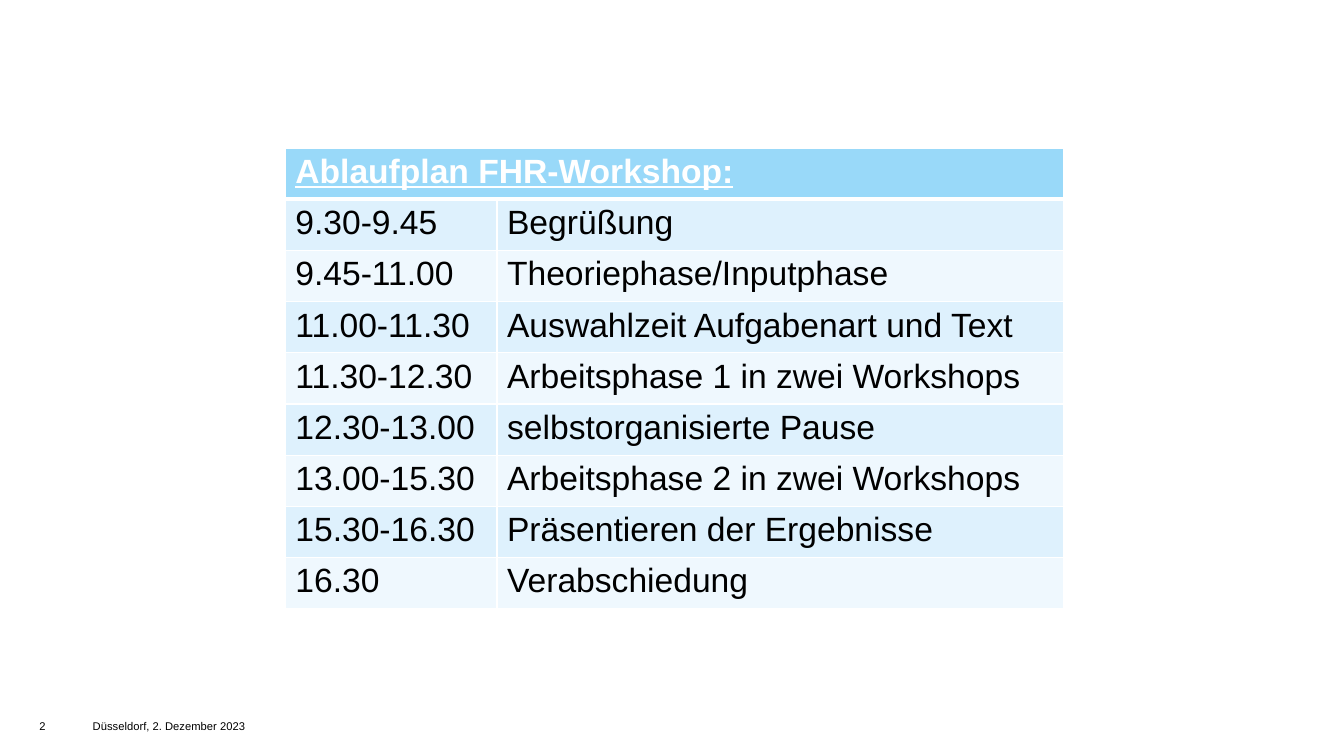
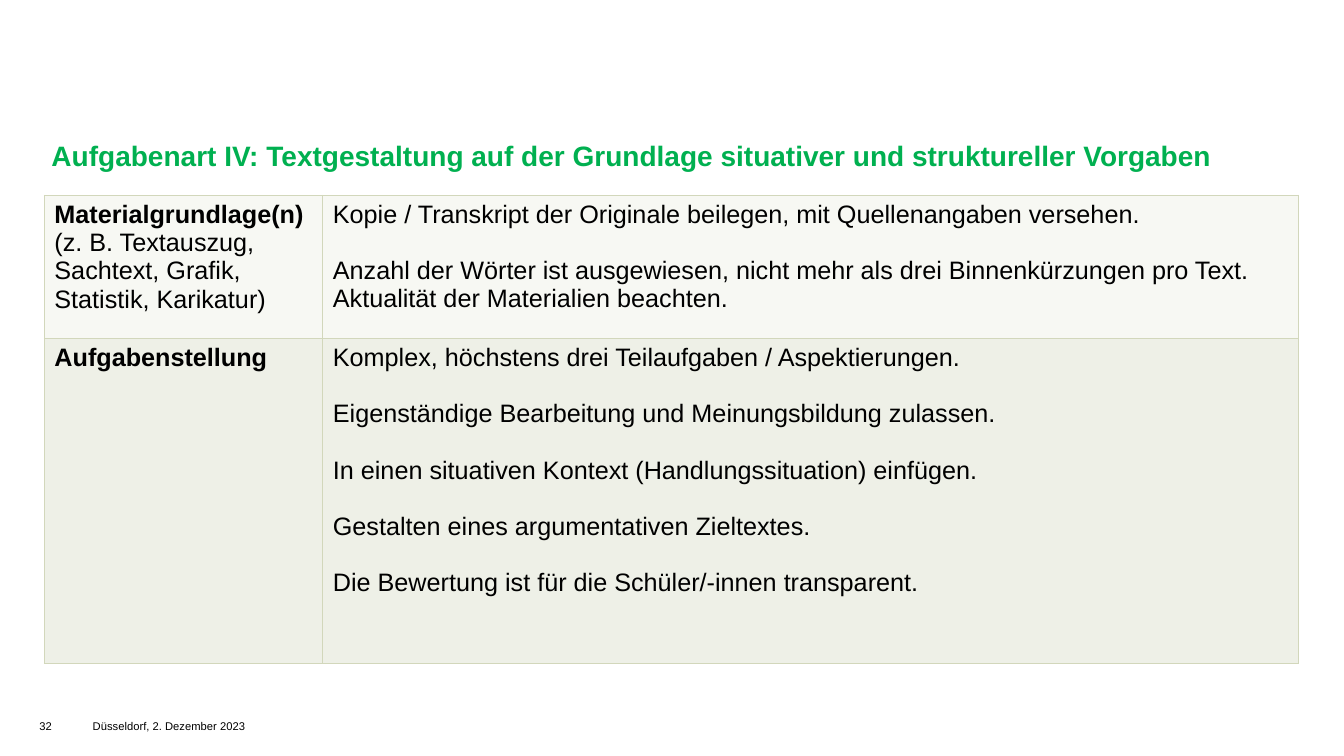
from lxml.etree import fromstring
from pptx import Presentation
from pptx.dml.color import RGBColor
from pptx.enum.text import MSO_ANCHOR as Anchor, MSO_AUTO_SIZE as Fit, PP_ALIGN as Align
from pptx.oxml.ns import nsdecls
from pptx.util import Inches, Pt

# Shared look
WIDE, HIGH = 13.33, 7.5
FONT = "Arial"
BLACK, WHITE, GREEN = "000000", "FFFFFF", "00B050"
SKY, SKY_BANDS = "99D9F9", ("DEF1FD", "EFF8FE")
OLIVE, OLIVE_BANDS = "D2D7BB", ("F7F8F3", "EEF0E7")
BLANK, TITLE_ONLY = 6, 5
DATE = "Düsseldorf, 2. Dezember 2023"

# Content
PLAN = [
    ("9.30-9.45", "Begrüßung"),
    ("9.45-11.00", "Theoriephase/Inputphase"),
    ("11.00-11.30", "Auswahlzeit Aufgabenart und Text"),
    ("11.30-12.30", "Arbeitsphase 1 in zwei Workshops"),
    ("12.30-13.00", "selbstorganisierte Pause"),
    ("13.00-15.30", "Arbeitsphase 2 in zwei Workshops"),
    ("15.30-16.30", "Präsentieren der Ergebnisse"),
    ("16.30", "Verabschiedung"),
]
# Each task row: label, note, groups of lines with a gap between groups
TASKS = [
    ("Materialgrundlage(n)",
     "(z. B. Textauszug, Sachtext, Grafik, Statistik, Karikatur)",
     [["Kopie / Transkript der Originale beilegen, mit Quellenangaben versehen."],
      ["Anzahl der Wörter ist ausgewiesen, nicht mehr als drei Binnenkürzungen pro Text.",
       "Aktualität der Materialien beachten."]]),
    ("Aufgabenstellung", None,
     [["Komplex, höchstens drei Teilaufgaben / Aspektierungen."],
      ["Eigenständige Bearbeitung und Meinungsbildung zulassen."],
      ["In einen situativen Kontext (Handlungssituation) einfügen."],
      ["Gestalten eines argumentativen Zieltextes."],
      ["Die Bewertung ist für die Schüler/-innen transparent."]]),
]


def color(code):
    return RGBColor.from_string(code)


def write(frame, lines, size, code=BLACK):
    """Fill a frame with lines of (text, bold, space before)."""
    for i, (text, bold, gap) in enumerate(lines):
        para = frame.add_paragraph() if i else frame.paragraphs[0]
        para.text = text
        para.alignment = Align.LEFT
        para.space_before = Pt(gap)
        for run in para.runs:
            font = run.font
            font.name, font.size, font.bold = FONT, Pt(size), bold
            font.color.rgb = color(code)


def inset(frame, left=0):
    frame.margin_left = Inches(left)
    frame.margin_top = frame.margin_right = frame.margin_bottom = 0
    frame.word_wrap = True
    frame.auto_size = Fit.NONE


def paint(cell, fill, line, top=1, bottom=1):
    """Fill a cell and draw its four borders."""
    cell.fill.solid()
    cell.fill.fore_color.rgb = color(fill)
    props = cell._tc.get_or_add_tcPr()
    for i, (side, width) in enumerate(zip("LRTB", (1, 1, top, bottom))):
        props.insert(i, fromstring(
            f'<a:ln{side} {nsdecls("a")} w="{Pt(width)}"><a:solidFill>'
            f'<a:srgbClr val="{line}"/></a:solidFill></a:ln{side}>'))


def grid(slide, box, cols, rows):
    """Add a plain table; cols and rows are shares of the box."""
    left, top, width, height = box
    table = slide.shapes.add_table(
        len(rows), len(cols), *map(Inches, box)).table
    table.first_row = table.horz_banding = False
    for col, share in zip(table.columns, cols):
        col.width = Inches(width * share)
    for row, share in zip(table.rows, rows):
        row.height = Inches(height * share)
    return table


def footer(slide, number):
    for left, width, text in ((0.39, 0.42, str(number)), (0.92, 3.04, DATE)):
        box = slide.shapes.add_textbox(*map(Inches, (left, 7.14, width, 0.36)))
        inset(box.text_frame)
        write(box.text_frame, [(text, False, 0)], 8)


def heading(slide, text, box):
    title = slide.shapes.title
    title.left, title.top, title.width, title.height = map(Inches, box)
    frame = title.text_frame
    inset(frame, 0.07)
    frame.vertical_anchor = Anchor.MIDDLE
    write(frame, [(text, True, 0)], 20, GREEN)


def schedule(slide, box):
    count = len(PLAN) + 1
    table = grid(slide, box, (0.272, 0.728), [1 / count] * count)
    # Header across both columns
    head = table.cell(0, 0)
    head.merge(table.cell(0, 1))
    for col in range(2):
        paint(table.cell(0, col), SKY, WHITE, bottom=3)
    write(head.text_frame, [("Ablaufplan FHR-Workshop:", True, 0)], 24, WHITE)
    head.text_frame.paragraphs[0].runs[0].font.underline = True
    # Banded rows
    for r, entry in enumerate(PLAN, 1):
        for c, text in enumerate(entry):
            cell = table.cell(r, c)
            paint(cell, SKY_BANDS[(r - 1) % 2], WHITE, top=3 if r == 1 else 1)
            write(cell.text_frame, [(text, False, 0)], 24)


def tasks(slide, box):
    table = grid(slide, box, (0.222, 0.778), (0.306, 0.694))
    for r, (label, note, groups) in enumerate(TASKS):
        names = [(label, True, 0)] + ([(note, False, 0)] if note else [])
        points = [(text, False, 20 if g and not i else 0)
                  for g, group in enumerate(groups)
                  for i, text in enumerate(group)]
        for c, lines in enumerate((names, points)):
            cell = table.cell(r, c)
            paint(cell, OLIVE_BANDS[r], OLIVE)
            write(cell.text_frame, lines, 18)


def main():
    deck = Presentation()
    deck.slide_width, deck.slide_height = Inches(WIDE), Inches(HIGH)

    # Workshop schedule
    slide = deck.slides.add_slide(deck.slide_layouts[BLANK])
    schedule(slide, (2.83, 1.47, 7.72, 4.57))
    footer(slide, 2)

    # Task type IV
    slide = deck.slides.add_slide(deck.slide_layouts[TITLE_ONLY])
    heading(slide, "Aufgabenart IV: Textgestaltung auf der Grundlage "
            "situativer und struktureller Vorgaben", (0.44, 1.23, 12.44, 0.63))
    tasks(slide, (0.44, 1.94, 12.44, 4.64))
    footer(slide, 32)

    deck.save("out.pptx")


if __name__ == "__main__":
    main()
